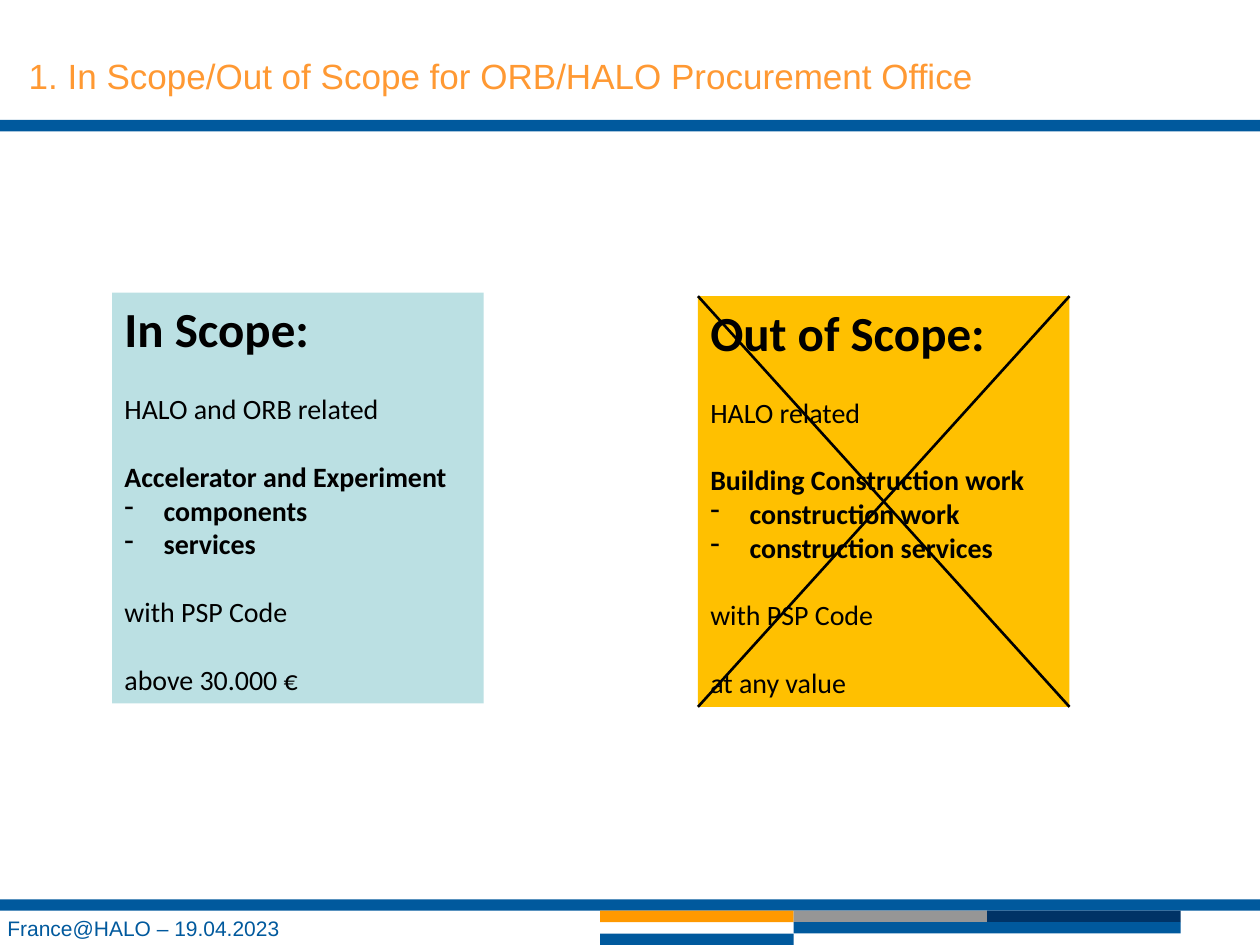
from lxml import etree
from pptx import Presentation
from pptx.dml.color import RGBColor
from pptx.enum.shapes import MSO_CONNECTOR, MSO_SHAPE
from pptx.enum.text import MSO_ANCHOR, PP_ALIGN
from pptx.oxml.ns import qn
from pptx.util import Cm, Pt

RECT = MSO_SHAPE.RECTANGLE
STRAIGHT = MSO_CONNECTOR.STRAIGHT
TOP, MIDDLE = MSO_ANCHOR.TOP, MSO_ANCHOR.MIDDLE
LEFT = PP_ALIGN.LEFT

COLORS = {
    "blue": "00599D",
    "navy": "003366",
    "grey": "969696",
    "orange": "FF9900",
    "title": "FF9933",
    "aqua": "BBE0E3",
    "amber": "FFC000",
    "black": "000000",
}
BAR = 0.23
BLOCK = 3.9
LINE_GAP = 19.5


def rgb(name):
    return RGBColor.from_string(COLORS[name])


def add_rect(slide, x, y, w, h, color):
    sp = slide.shapes.add_shape(RECT, Cm(x), Cm(y), Cm(w), Cm(h))
    sp.shadow.inherit = False
    sp.fill.solid()
    sp.fill.fore_color.rgb = rgb(color)
    sp.line.fill.background()
    return sp


def add_line(slide, x1, y1, x2, y2):
    line = slide.shapes.add_connector(STRAIGHT, Cm(x1), Cm(y1), Cm(x2), Cm(y2))
    line.line.color.rgb = rgb("black")
    line.line.width = Pt(1.5)
    etree.SubElement(line._element.spPr, qn("a:effectLst"))


def write(p, text, size=16, font="Calibri", color="black", bold=False, before=0, dash=False):
    p.alignment = LEFT
    p.space_before = Pt(before)
    if dash:
        pPr = p._p.get_or_add_pPr()
        pPr.set("marL", str(Cm(0.79)))
        pPr.set("indent", str(-Cm(0.79)))
        etree.SubElement(pPr, qn("a:buChar"), char="-")
    r = p.add_run()
    r.text = text
    r.font.size = Pt(size)
    r.font.name = font
    r.font.bold = bold
    r.font.color.rgb = rgb(color)


def add_label(slide, x, y, w, h, text, inset=0, **fmt):
    tf = slide.shapes.add_textbox(Cm(x), Cm(y), Cm(w), Cm(h)).text_frame
    tf.word_wrap = True
    tf.vertical_anchor = MIDDLE
    tf.margin_left = tf.margin_right = Cm(inset)
    tf.margin_top = tf.margin_bottom = 0
    write(tf.paragraphs[0], text, font="Arial", **fmt)


def add_header(slide, x, y, w, h, text):
    add_rect(slide, x, y + h - BAR, w, BAR, "blue")
    add_label(slide, x + 0.58, y + 1.02, w - 2.95, 1, text, size=20, color="title")


def add_footer(slide, x, y, w, text):
    add_rect(slide, x, y, w, BAR, "blue")
    blocks = [
        (0, 1, 1, "orange"),
        (1, 1, 1, "grey"),
        (2, 1, 1, "navy"),
        (1, 2, 2, "blue"),
        (0, 3, 1, "blue"),
    ]
    for col, row, span, color in blocks:
        add_rect(slide, x + 12.1 + col * BLOCK, y + row * BAR, span * BLOCK, BAR, color)
    add_label(slide, x - 0.1, y + BAR, 12.2, 0.69, text, inset=0.25, size=12, color="blue")


def add_scope(slide, x, y, w, h, color, heading, origin, subject, items, limit, crossed=False):
    tf = add_rect(slide, x, y, w, h, color).text_frame
    tf.word_wrap = True
    tf.vertical_anchor = TOP
    lines = [
        (heading, dict(size=28, bold=True)),
        (origin, dict(before=LINE_GAP)),
        (subject, dict(bold=True, before=LINE_GAP)),
        *((item, dict(bold=True, dash=True)) for item in items),
        ("with PSP Code", dict(before=LINE_GAP)),
        (limit, dict(before=LINE_GAP)),
    ]
    for i, (text, fmt) in enumerate(lines):
        p = tf.add_paragraph() if i else tf.paragraphs[0]
        write(p, text, **fmt)
    if crossed:
        add_line(slide, x, y, x + w, y + h)
        add_line(slide, x, y + h, x + w, y)


def main():
    prs = Presentation()
    prs.slide_width, prs.slide_height = Cm(25.4), Cm(19.05)
    slide = prs.slides.add_slide(prs.slide_layouts[6])
    add_header(slide, 0, 0, 25.4, 2.65,
               "1. In Scope/Out of Scope for ORB/HALO Procurement Office")
    add_scope(slide, 2.26, 5.9, 7.49, 8.28, "aqua", "In Scope:",
              "HALO and ORB related", "Accelerator and Experiment",
              ["components", "services"], "above 30.000 €")
    add_scope(slide, 14.07, 5.97, 7.49, 8.28, "amber", "Out of Scope:",
              "HALO related", "Building Construction work",
              ["construction work", "construction services"], "at any value",
              crossed=True)
    add_footer(slide, 0, 18.13, 25.4, "France@HALO – 19.04.2023")
    prs.save("out.pptx")


if __name__ == "__main__":
    main()
